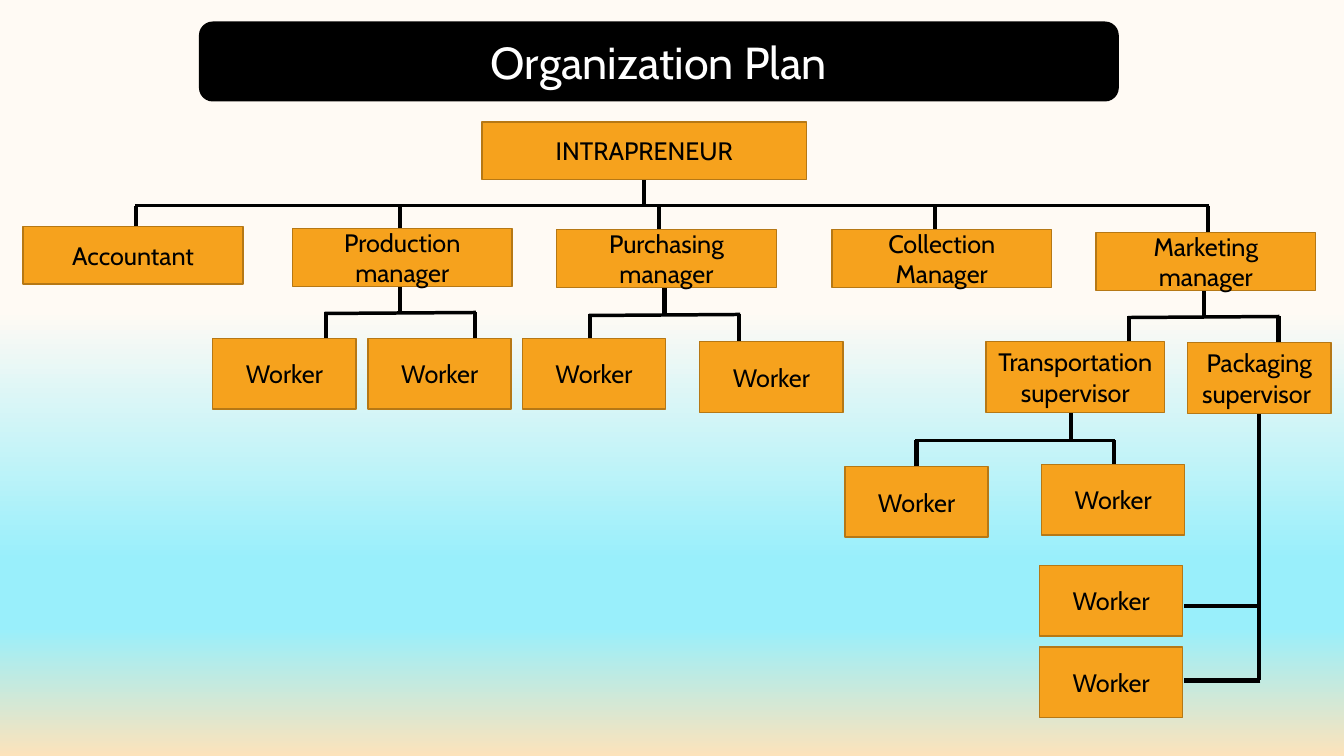
from lxml import etree
from pptx import Presentation
from pptx.dml.color import RGBColor
from pptx.enum.shapes import MSO_CONNECTOR as Connector, MSO_SHAPE as Shape
from pptx.enum.text import MSO_ANCHOR as Anchor, PP_ALIGN as Align
from pptx.oxml.ns import qn
from pptx.util import Inches, Pt

COLUMNS, ROWS = 13.33, 7.5  # grid with modules of one inch
BLACK = RGBColor(0x00, 0x00, 0x00)
WHITE = RGBColor(0xFF, 0xFF, 0xFF)
ORANGE = RGBColor(0xF6, 0xA2, 0x1D)
BROWN = RGBColor(0xB6, 0x78, 0x15)
CREAM = RGBColor(0xFF, 0xFA, 0xF4)
AQUA = RGBColor(0x99, 0xEF, 0xFB)
SAND = RGBColor(0xFC, 0xE3, 0xBB)


class OrganizationChart:
    font_name = "Cabin"
    stem_width, bar_width = 3, 2.5
    drop = 0.27

    def __init__(self, presentation):
        self.slide = presentation.slides.add_slide(presentation.slide_layouts[6])

    def background(self, stops):
        fill = self.slide.background.fill
        fill.gradient()
        fill.gradient_angle = 270
        stop_list = self.slide.element.find(".//" + qn("a:gsLst"))
        for stop in list(stop_list):
            stop_list.remove(stop)
        for percent, color in stops:
            stop = etree.SubElement(stop_list, qn("a:gs"), pos=str(percent * 1000))
            etree.SubElement(stop, qn("a:srgbClr"), val=str(color))

    def box(self, text, column, row, columns, rows, kind=Shape.RECTANGLE,
            fill=ORANGE, line=BROWN, color=BLACK, size=18):
        shape = self.slide.shapes.add_shape(
            kind, Inches(column), Inches(row), Inches(columns), Inches(rows))
        shape.shadow.inherit = False
        shape.fill.solid()
        shape.fill.fore_color.rgb = fill
        shape.line.color.rgb = line
        shape.line.width = Pt(1)
        frame = shape.text_frame
        frame.word_wrap = True
        frame.vertical_anchor = Anchor.MIDDLE
        paragraph = frame.paragraphs[0]
        paragraph.text = text
        paragraph.alignment = Align.CENTER
        paragraph.font.name = self.font_name
        paragraph.font.size = Pt(size)
        paragraph.font.color.rgb = color

    def line(self, column, row, end_column, end_row, width=stem_width):
        connector = self.slide.shapes.add_connector(
            Connector.STRAIGHT, Inches(column), Inches(row),
            Inches(end_column), Inches(end_row))
        connector.line.color.rgb = BLACK
        connector.line.width = Pt(width)
        etree.SubElement(connector.element.spPr, qn("a:effectLst"))

    def fork(self, stem, top, branches, tilt=0.0):
        """Draw a stem, a bar below it and one drop per branch."""
        bar = top + self.drop
        self.line(stem, top, stem, bar)
        self.line(branches[0] - 0.01, bar, branches[-1] + 0.01, bar - tilt,
                  self.bar_width)
        for branch in branches:
            self.line(branch, bar - tilt, branch, bar + self.drop - tilt)


def main():
    presentation = Presentation()
    presentation.slide_width = Inches(COLUMNS)
    presentation.slide_height = Inches(ROWS)
    chart = OrganizationChart(presentation)
    chart.background([(41, CREAM), (74, AQUA), (83, AQUA), (100, SAND)])

    # Connecting lines
    chart.fork(6.39, 1.77, [1.35, 3.97, 6.54, 9.27, 11.98])
    for stem, top in [(3.97, 2.84), (6.59, 2.86), (11.94, 2.88)]:
        chart.fork(stem, top, [stem - 0.74, stem + 0.74], tilt=0.01)
    chart.fork(10.62, 4.1, [9.09, 11.05])
    chart.line(12.49, 4.11, 12.49, 6.75)
    for row in (6.01, 6.75):
        chart.line(12.5, row, 11.74, row)

    # Title and head
    chart.box("Organization Plan", 1.98, 0.22, 9.11, 0.78,
              Shape.ROUNDED_RECTANGLE, BLACK, BLACK, WHITE, 32)
    chart.box("INTRAPRENEUR", 4.78, 1.21, 3.22, 0.57)

    # Managers
    for name, column, row in [
        ("Accountant", 0.23, 2.25),
        ("Production manager", 2.9, 2.27),
        ("Purchasing manager", 5.52, 2.28),
        ("Collection Manager", 8.25, 2.28),
        ("Marketing manager", 10.87, 2.31),
    ]:
        chart.box(name, column, row, 2.18, 0.57)

    # Supervisors
    chart.box("Transportation supervisor", 9.78, 3.39, 1.77, 0.7)
    chart.box("Packaging supervisor ", 11.78, 3.4, 1.42, 0.7)

    # Workers
    for column, row in [(2.11, 3.36), (3.65, 3.36), (5.18, 3.36), (6.94, 3.39),
                        (8.38, 4.63), (10.33, 4.61), (10.31, 5.61), (10.31, 6.42)]:
        chart.box("Worker", column, row, 1.42, 0.7)

    presentation.save("out.pptx")


if __name__ == "__main__":
    main()
